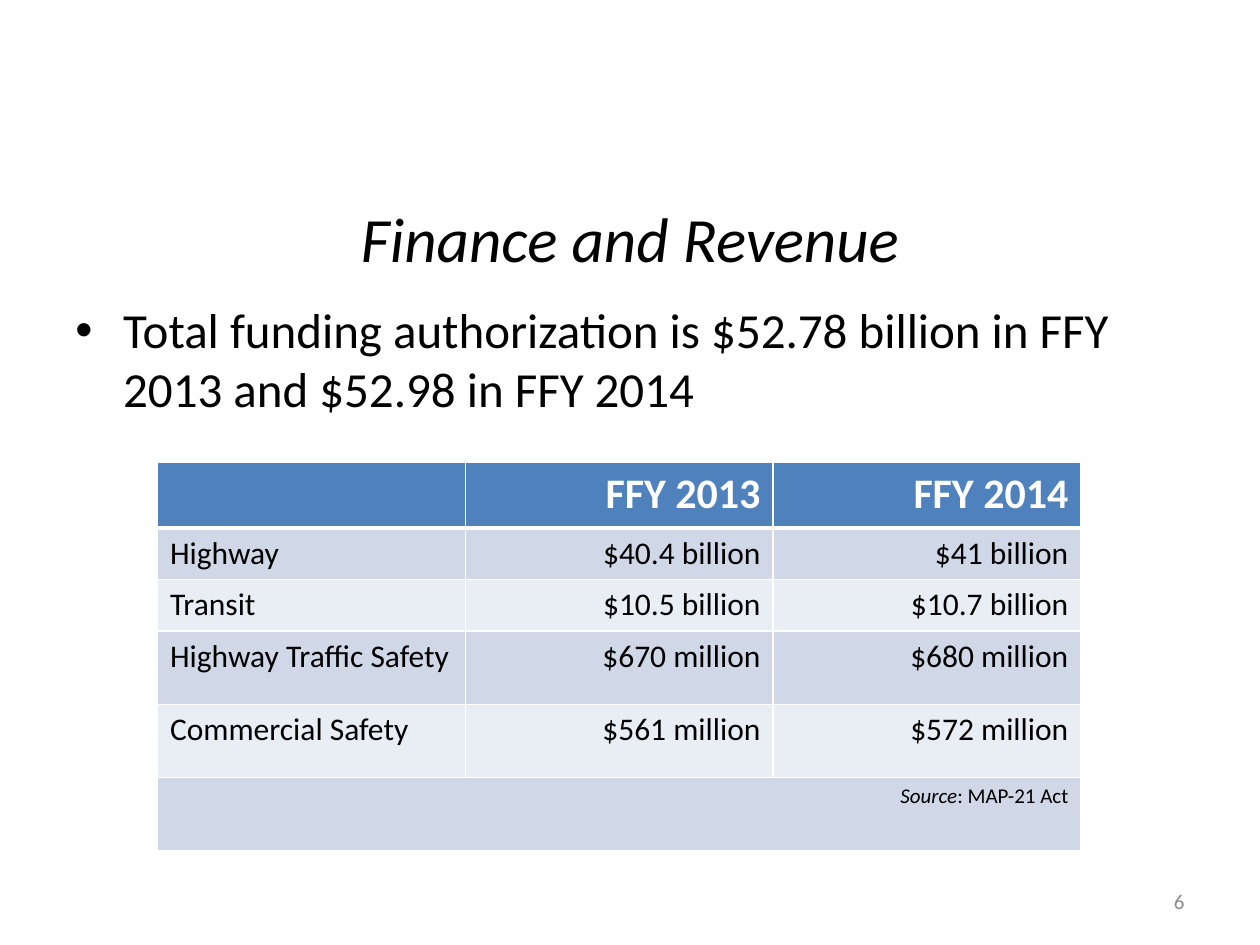
from pptx import Presentation
from pptx.dml.color import RGBColor
from pptx.enum.text import MSO_ANCHOR as Anchor, PP_ALIGN as Align
from pptx.oxml.ns import qn
from pptx.util import Inches, Pt
from lxml.etree import SubElement

# Content
TITLE = "Finance and Revenue"
BULLET = ("Total funding authorization is $52.78 billion in FFY 2013 "
          "and $52.98 in FFY 2014")
HEADER = ["", "FFY 2013", "FFY 2014"]
FUNDING = [
    ["Highway", "$40.4 billion", "$41 billion"],
    ["Transit", "$10.5 billion", "$10.7 billion"],
    ["Highway Traffic Safety", "$670 million", "$680 million"],
    ["Commercial Safety", "$561 million", "$572 million"],
]
SOURCE = [("Source", True), (": MAP-21 Act", False)]
PAGE_NUMBER = "6"

# Layout and colours
WIDTH, HEIGHT, MARGIN = 10, 7.5, 0.5
TABLE_LEFT, TABLE_TOP, TABLE_WIDTH = 1.25, 3.67, 7.33
ROW_HEIGHTS = [0.52, 0.41, 0.41, 0.58, 0.58, 0.58]
BLACK, WHITE, GREY, BLUE = "000000", "FFFFFF", "8C8C8C", "4F81BD"
BANDS = ["D0D8E8", "E9EDF4"]


def color(value):
    return RGBColor.from_string(value)


def add_span(para, text, size, hue=BLACK, bold=False, italic=False):
    span = para.add_run()
    span.text = text
    font = span.font
    font.name, font.size, font.bold, font.italic = "Calibri", Pt(size), bold, italic
    font.color.rgb = color(hue)


def add_box(page, left, top, width, height, align, anchor):
    box = page.shapes.add_textbox(*map(Inches, (left, top, width, height)))
    frame = box.text_frame
    frame.word_wrap = True
    frame.vertical_anchor = anchor
    para = frame.paragraphs[0]
    para.alignment = align
    return para


def add_bullet(para, indent):
    props = para._p.get_or_add_pPr()
    props.set("marL", str(Inches(indent)))
    props.set("indent", str(-Inches(indent)))
    SubElement(props, qn("a:buFont"), typeface="Arial")
    SubElement(props, qn("a:buChar"), char="•")


def style_cell(cell, fill, bottom=1, top=1):
    props = cell._tc.get_or_add_tcPr()
    for side, points in (("L", 1), ("R", 1), ("T", top), ("B", bottom)):
        line = SubElement(props, qn(f"a:ln{side}"), w=str(Pt(points)))
        SubElement(SubElement(line, qn("a:solidFill")), qn("a:srgbClr"), val=WHITE)
    cell.fill.solid()
    cell.fill.fore_color.rgb = color(fill)


deck = Presentation()
deck.slide_width, deck.slide_height = Inches(WIDTH), Inches(HEIGHT)
page = deck.slides.add_slide(deck.slide_layouts[6])

# Title, bullet and page number
full = WIDTH - 2 * MARGIN
para = add_box(page, MARGIN, 1.42, full, 0.92, Align.CENTER, Anchor.MIDDLE)
add_span(para, TITLE, 36, italic=True)
para = add_box(page, MARGIN, 2.33, full, 4.37, Align.LEFT, Anchor.TOP)
add_bullet(para, 0.38)
add_span(para, BULLET, 28)
para = add_box(page, 7.17, 6.95, 2.33, 0.4, Align.RIGHT, Anchor.MIDDLE)
add_span(para, PAGE_NUMBER, 12, GREY)

# Funding table
rows = [HEADER, *FUNDING, [""] * len(HEADER)]
table = page.shapes.add_table(
    len(rows), len(HEADER), Inches(TABLE_LEFT), Inches(TABLE_TOP),
    Inches(TABLE_WIDTH), Inches(sum(ROW_HEIGHTS))).table
for column in table.columns:
    column.width = Inches(TABLE_WIDTH / len(HEADER))
for r, (texts, height) in enumerate(zip(rows, ROW_HEIGHTS)):
    table.rows[r].height = Inches(height)
    head = r == 0
    for c, text in enumerate(texts):
        cell = table.cell(r, c)
        style_cell(cell, BLUE if head else BANDS[(r - 1) % 2],
                   bottom=3 if head else 1, top=3 if r == 1 else 1)
        para = cell.text_frame.paragraphs[0]
        para.alignment = Align.RIGHT if c else Align.LEFT
        if text:
            add_span(para, text, 24 if head else 18, WHITE if head else BLACK, bold=head)

# Source row across the whole table
last = len(rows) - 1
cell = table.cell(last, 0)
cell.merge(table.cell(last, len(HEADER) - 1))
para = cell.text_frame.paragraphs[0]
para.alignment = Align.RIGHT
for text, italic in SOURCE:
    add_span(para, text, 12, italic=italic)

deck.save("out.pptx")
